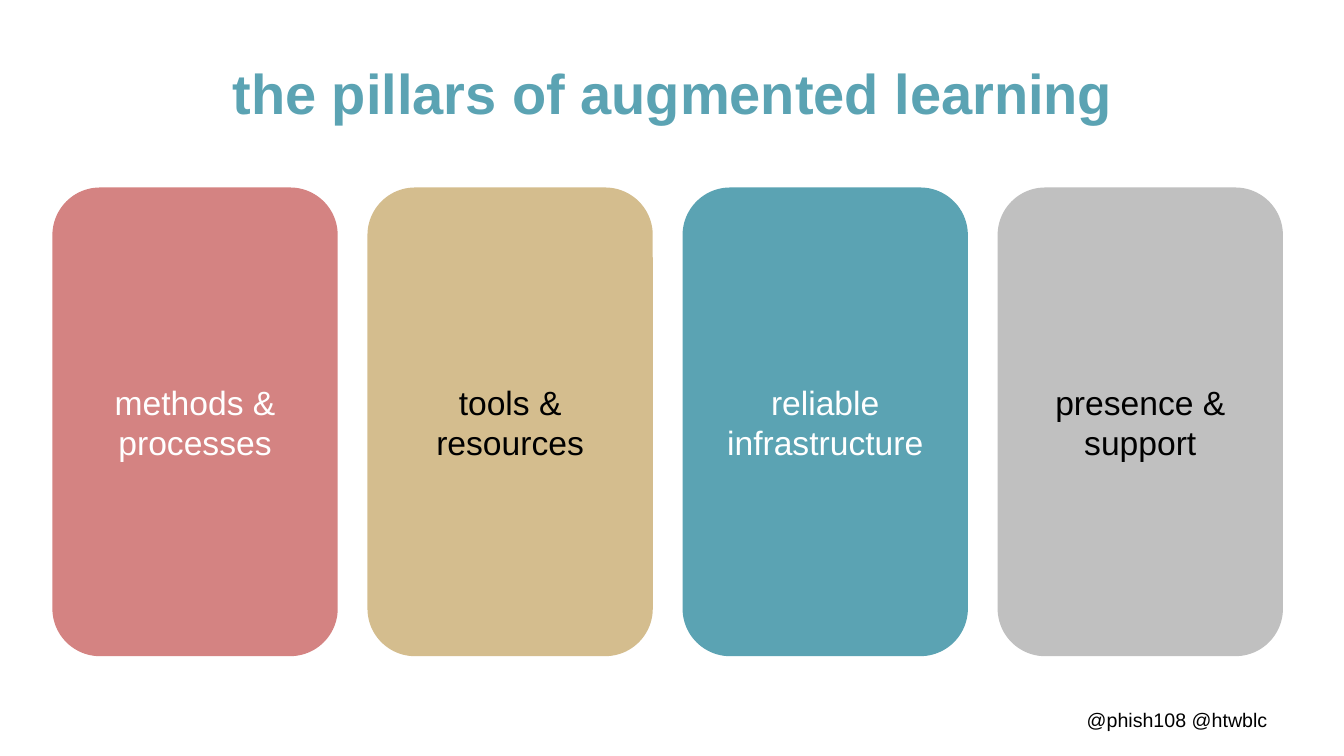
import pptx
import pptx.util
import pptx.dml.color
import pptx.enum.shapes
import pptx.enum.text

Inches = pptx.util.Inches
Align = pptx.enum.text.PP_ALIGN
Anchor = pptx.enum.text.MSO_ANCHOR
COLORS = {
    "rose": "D48382",
    "sand": "D4BD8E",
    "teal": "5BA3B3",
    "gray": "C0C0C0",
    "white": "FFFFFF",
    "black": "000000",
}


def color(name):
    return pptx.dml.color.RGBColor.from_string(COLORS[name])


def write(shape, text, size, ink, align, anchor=Anchor.MIDDLE, bold=False):
    """Put one formatted run of wrapped text into a shape."""
    frame = shape.text_frame
    frame.word_wrap = True
    frame.vertical_anchor = anchor
    para = frame.paragraphs[0]
    para.alignment = align
    run = para.add_run()
    run.text = text
    run.font.name = "Arial"
    run.font.size = pptx.util.Pt(size)
    run.font.bold = bold
    run.font.color.rgb = color(ink)


deck = pptx.Presentation()
deck.slide_width = Inches(13.33)
deck.slide_height = Inches(7.5)
slide = deck.slides.add_slide(deck.slide_layouts[6])
shapes = slide.shapes

title = shapes.add_textbox(Inches(0.67), Inches(0.29), Inches(12), Inches(1.25))
write(title, "the pillars of augmented learning", 40, "teal", Align.CENTER, bold=True)

pillars = [
    ("methods & processes", "rose", "white"),
    ("tools & resources", "sand", "black"),
    ("reliable infrastructure", "teal", "white"),
    ("presence & support", "gray", "black"),
]
left, step = 0.52, 3.125
for i, (text, fill, ink) in enumerate(pillars):
    pillar = shapes.add_shape(
        pptx.enum.shapes.MSO_SHAPE.ROUNDED_RECTANGLE,
        Inches(left + i * step), Inches(1.86), Inches(2.83), Inches(4.65))
    pillar.shadow.inherit = False
    pillar.fill.solid()
    pillar.fill.fore_color.rgb = color(fill)
    pillar.line.fill.background()
    write(pillar, text, 24, ink, Align.CENTER)

handles = shapes.add_textbox(Inches(1.85), Inches(6.97), Inches(10.82), Inches(0.39))
write(handles, "@phish108 @htwblc", 14, "black", Align.RIGHT, Anchor.TOP)

deck.save("out.pptx")
